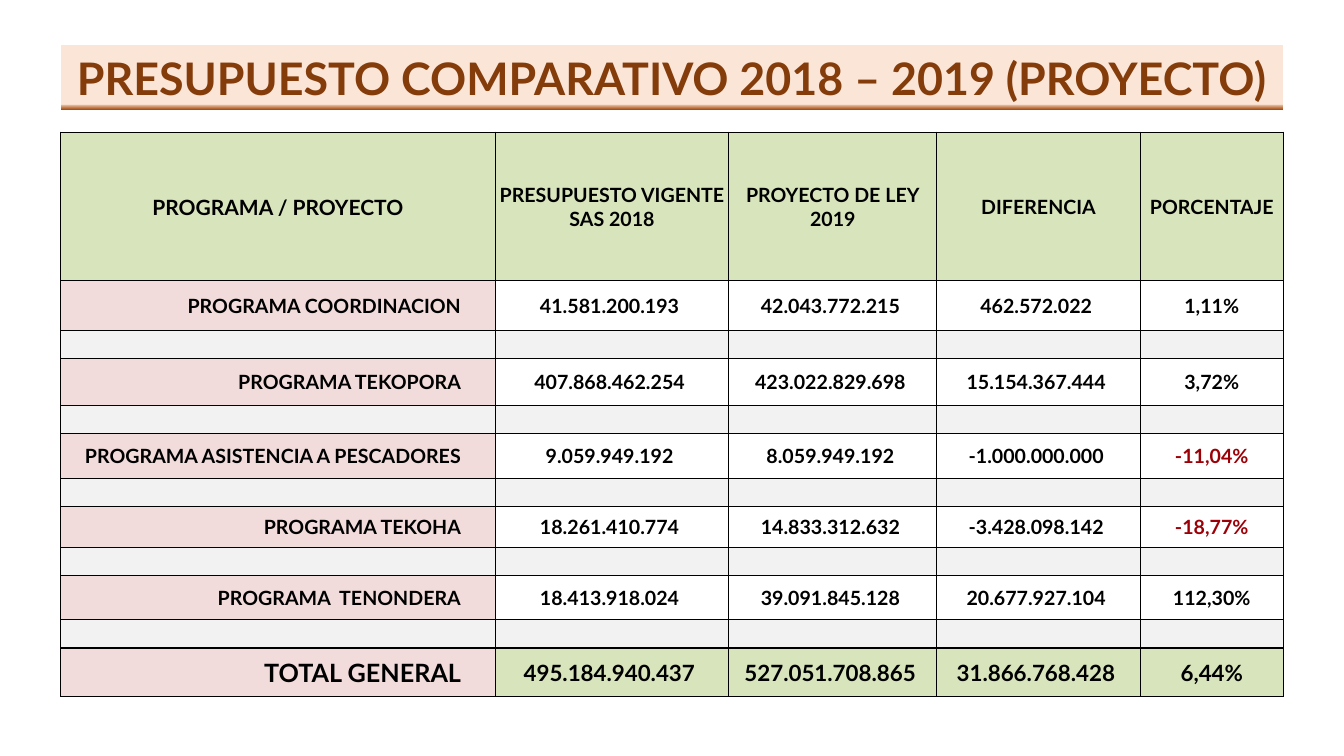
"""Build the 2018 – 2019 budget comparison slide."""
import copy
import pptx
import pptx.dml.color
import pptx.enum.text
import pptx.oxml
import pptx.oxml.ns
import pptx.util

Cm = pptx.util.Cm
Pt = pptx.util.Pt
ALIGN = pptx.enum.text.PP_ALIGN
MIDDLE = pptx.enum.text.MSO_ANCHOR.MIDDLE
HUES = {"black": "000000", "red": "9C0006", "brown": "843C0B", "green": "D8E4BC",
        "pink": "F2DCDB", "gray": "F2F2F2", "white": "FFFFFF"}
FADE = [(0.92, "FBE5D6"), (0.94, "DDAE8E"), (1, "A85014")]
HEAD = ["PROGRAMA / PROYECTO", "PRESUPUESTO VIGENTE SAS 2018", "PROYECTO DE LEY\n2019",
        "DIFERENCIA", "PORCENTAJE"]
ITEMS = [
    ["PROGRAMA COORDINACION", "41.581.200.193 ", "42.043.772.215 ", "462.572.022 ", "1,11%"],
    ["PROGRAMA TEKOPORA", "407.868.462.254 ", "423.022.829.698 ", "15.154.367.444 ", "3,72%"],
    ["PROGRAMA ASISTENCIA A PESCADORES", "9.059.949.192 ", "8.059.949.192 ",
     "-1.000.000.000 ", "-11,04%"],
    ["PROGRAMA TEKOHA", "18.261.410.774 ", "14.833.312.632 ", "-3.428.098.142 ", "-18,77%"],
    ["PROGRAMA  TENONDERA", "18.413.918.024 ", "39.091.845.128 ", "20.677.927.104 ", "112,30%"],
    ["TOTAL GENERAL", "495.184.940.437 ", "527.051.708.865 ", "31.866.768.428 ", "6,44%"],
]
WIDTHS = [10.95, 5.89, 5.24, 5.13, 3.6]
TALL = [1.25, 1.18, 1.13, 1.03, 1.12, 1.22]
GAP = 0.71
LEFT, WIDE = Cm(1.53), Cm(30.81)


def style(para, size, hue, align):
    """Set the font and alignment of one paragraph."""
    para.alignment = align
    para.font.name = "Lato"
    para.font.size = Pt(size)
    para.font.bold = True
    para.font.color.rgb = pptx.dml.color.RGBColor.from_string(HUES[hue])


def frame(cell):
    """Draw thin black lines on all four sides of a cell."""
    props = cell._tc.get_or_add_tcPr()
    for spot, side in enumerate(["lnL", "lnR", "lnT", "lnB"]):
        props.insert(spot, pptx.oxml.parse_xml(
            f'<a:{side} {pptx.oxml.ns.nsdecls("a")} w="12700"><a:solidFill>'
            f'<a:srgbClr val="{HUES["black"]}"/></a:solidFill></a:{side}>'))


deck = pptx.Presentation()
deck.slide_width, deck.slide_height = Cm(33.87), Cm(19.05)
slide = deck.slides.add_slide(deck.slide_layouts[5])

title = slide.shapes.title
title.left, title.top, title.width, title.height = LEFT, Cm(1.13), WIDE, Cm(1.63)
title.fill.gradient()
title.fill.gradient_angle = 270
stops = title.fill._fill._gradFill.gsLst
stops.append(copy.deepcopy(stops[-1]))
for stop, (place, hue) in zip(title.fill.gradient_stops, FADE):
    stop.position = place
    stop.color.rgb = pptx.dml.color.RGBColor.from_string(hue)
text = title.text_frame
text.text = "PRESUPUESTO COMPARATIVO 2018 – 2019 (PROYECTO)"
text.auto_size = pptx.enum.text.MSO_AUTO_SIZE.NONE
text.vertical_anchor = MIDDLE
style(text.paragraphs[0], 32, "brown", ALIGN.CENTER)

rows, highs = [HEAD], [3.74]
for item, high in zip(ITEMS, TALL):
    if item is not ITEMS[0]:
        rows.append([""] * len(HEAD))
        highs.append(GAP)
    rows.append(item)
    highs.append(high)

table = slide.shapes.add_table(len(rows), len(HEAD), LEFT, Cm(3.33), WIDE,
                               Cm(sum(highs))).table
table.first_row = table.horz_banding = False
for col, wide in zip(table.columns, WIDTHS):
    col.width = Cm(wide)

for r, (row, high) in enumerate(zip(rows, highs)):
    table.rows[r].height = Cm(high)
    last = r == len(rows) - 1
    for c, words in enumerate(row):
        cell = table.cell(r, c)
        label = c == 0 and r > 0 and words
        cell.text = words
        cell.vertical_anchor = MIDDLE
        cell.margin_left = cell.margin_top = Cm(0.03)
        cell.margin_right = Cm(0.86 if label else 0.03)
        cell.margin_bottom = 0
        if not words:
            back = "gray"
        elif label:
            back = "pink"
        else:
            back = "green" if r == 0 or last else "white"
        cell.fill.solid()
        cell.fill.fore_color.rgb = pptx.dml.color.RGBColor.from_string(HUES[back])
        if last:
            size = 18 if label else 16
        else:
            size = 15 if r == c == 0 else 14
        hue = "red" if c == 4 and words.startswith("-") else "black"
        for para in cell.text_frame.paragraphs:
            style(para, size, hue, ALIGN.RIGHT if label else ALIGN.CENTER)
        frame(cell)

deck.save("out.pptx")
